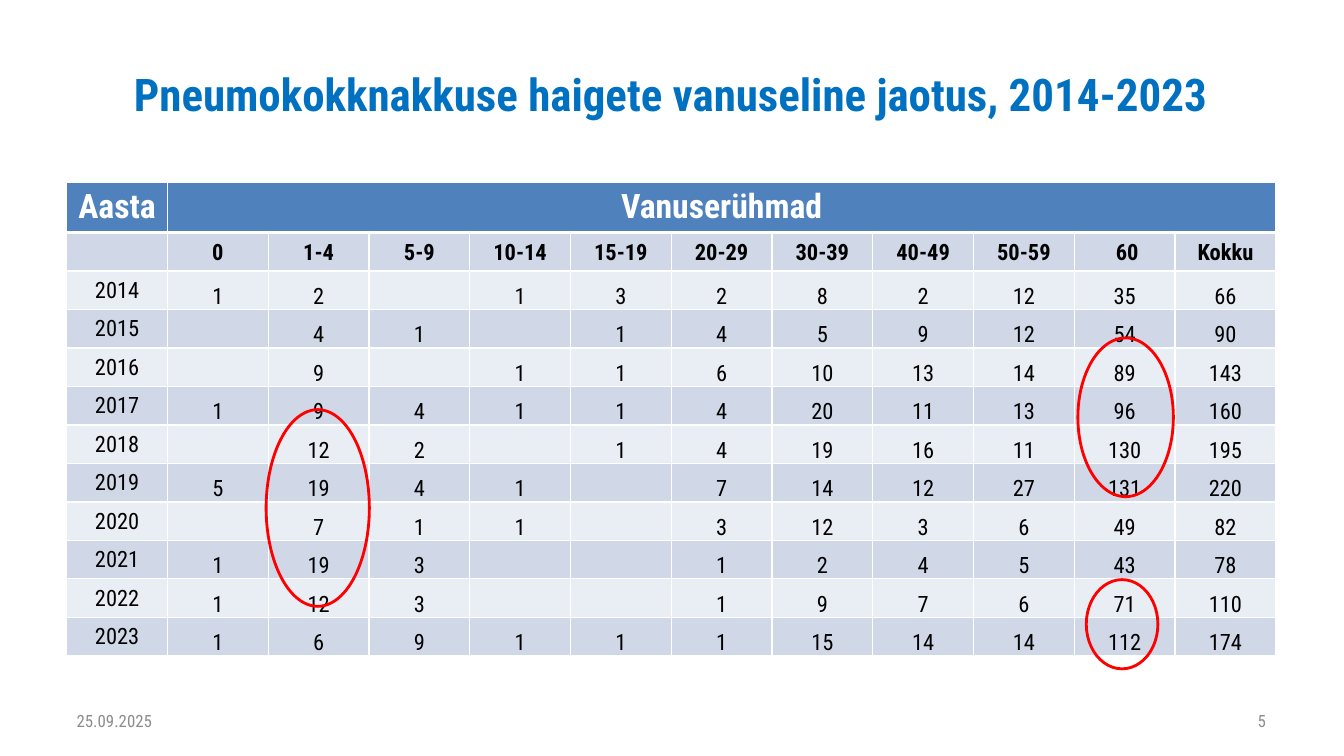
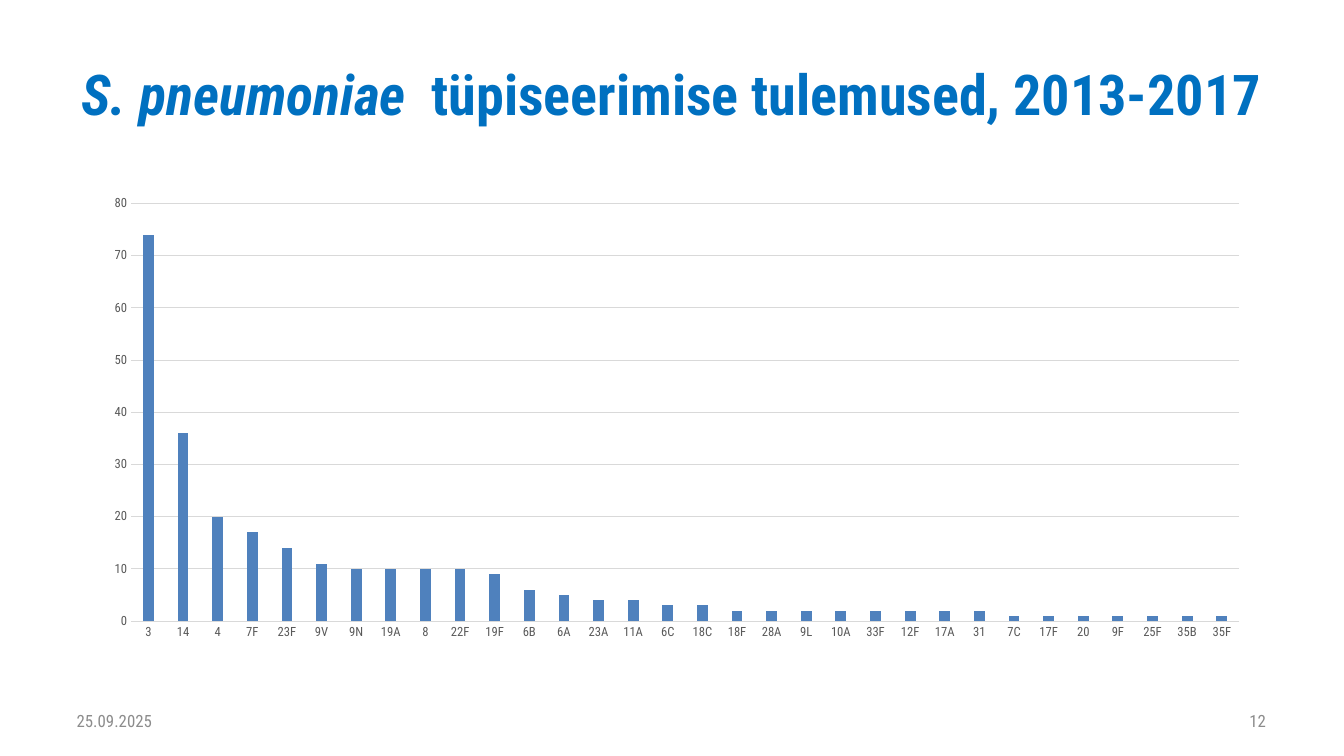
from dataclasses import dataclass

from lxml import etree
from pptx import Presentation
from pptx.chart.data import CategoryChartData
from pptx.dml.color import RGBColor
from pptx.enum.chart import XL_CHART_TYPE, XL_TICK_MARK
from pptx.enum.shapes import MSO_SHAPE
from pptx.enum.text import MSO_ANCHOR, PP_ALIGN
from pptx.oxml.ns import qn
from pptx.slide import Slide
from pptx.util import Pt

LEFT, MID, RIGHT = PP_ALIGN.LEFT, PP_ALIGN.CENTER, PP_ALIGN.RIGHT
TOP, CENTER, LOW = MSO_ANCHOR.TOP, MSO_ANCHOR.MIDDLE, MSO_ANCHOR.BOTTOM
OVAL = MSO_SHAPE.OVAL
COLUMN = XL_CHART_TYPE.COLUMN_CLUSTERED
NO_TICK = XL_TICK_MARK.NONE

FONT = "Roboto Condensed"
COLORS = {
    "title": "0070C0", "foot": "8C8C8C", "head": "4F81BD", "dark": "D0D8E8",
    "light": "E9EDF4", "white": "FFFFFF", "black": "000000", "ring": "FF0000",
    "label": "595959", "grid": "D9D9D9",
}
DATE = "25.09.2025"
EDGE, WIDE = 47.5, 861


@dataclass
class Box:
    x: float
    y: float
    w: float
    h: float

    def pts(self) -> tuple:
        return Pt(self.x), Pt(self.y), Pt(self.w), Pt(self.h)


@dataclass
class Run:
    text: str
    size: float
    color: str
    bold: bool = False
    italic: bool = False


TITLE = Box(EDGE, 21.5, WIDE, 90)
DAY = Box(EDGE, 499, 223, 28.5)
PAGE = Box(EDGE + WIDE - 223, 499, 223, 28.5)
TABLE = Box(EDGE, 129.5, WIDE, 328.8)
CHART = Box(65, 133, 834, 329)
RINGS = [
    Box(189.5, 291.5, 73.5, 140),
    Box(767.5, 240.5, 68, 113),
    Box(773.5, 412.5, 51, 63.5),
]

AGES = ["", "0", "1-4", "5-9", "10-14", "15-19", "20-29", "30-39", "40-49",
        "50-59", " 60", "Kokku"]
CASES = [
    [2014, 1, 2, "", 1, 3, 2, 8, 2, 12, 35, 66],
    [2015, "", 4, 1, "", 1, 4, 5, 9, 12, 54, 90],
    [2016, "", 9, "", 1, 1, 6, 10, 13, 14, 89, 143],
    [2017, 1, 9, 4, 1, 1, 4, 20, 11, 13, 96, 160],
    [2018, "", 12, 2, "", 1, 4, 19, 16, 11, 130, 195],
    [2019, 5, 19, 4, 1, "", 7, 14, 12, 27, 131, 220],
    [2020, "", 7, 1, 1, "", 3, 12, 3, 6, 49, 82],
    [2021, 1, 19, 3, "", "", 1, 2, 4, 5, 43, 78],
    [2022, 1, 12, 3, "", "", 1, 9, 7, 6, 71, 110],
    [2023, 1, 6, 9, 1, 1, 1, 15, 14, 14, 112, 174],
]
TYPES = {
    "3": 74, "14": 36, "4": 20, "7F": 17, "23F": 14, "9V": 11, "9N": 10,
    "19A": 10, "8": 10, "22F": 10, "19F": 9, "6B": 6, "6A": 5, "23A": 4,
    "11A": 4, "6C": 3, "18C": 3, "18F": 2, "28A": 2, "9L": 2, "10A": 2,
    "33F": 2, "12F": 2, "17A": 2, "31": 2, "7C": 1, "17F": 1, "20": 1,
    "9F": 1, "25F": 1, "35B": 1, "35F": 1,
}


def rgb(name: str) -> RGBColor:
    return RGBColor.from_string(COLORS[name])


def style(font, size: float, color: str) -> None:
    font.name, font.size = FONT, Pt(size)
    font.color.rgb = rgb(color)


def write(frame, runs: list[Run], align) -> None:
    para = frame.paragraphs[0]
    para.alignment = align
    for item in runs:
        run = para.add_run()
        run.text = item.text
        style(run.font, item.size, item.color)
        run.font.bold, run.font.italic = item.bold, item.italic


def label(slide: Slide, box: Box, runs: list[Run], align) -> None:
    frame = slide.shapes.add_textbox(*box.pts()).text_frame
    frame.word_wrap = True
    frame.vertical_anchor = CENTER
    write(frame, runs, align)


def new_page(deck, title: list[Run], page: int) -> Slide:
    """Add a blank slide with its title and footer."""
    slide = deck.slides.add_slide(deck.slide_layouts[6])
    label(slide, TITLE, title, MID)
    label(slide, DAY, [Run(DATE, 12, "foot")], LEFT)
    label(slide, PAGE, [Run(str(page), 12, "foot")], RIGHT)
    return slide


def border(cell, low: float) -> None:
    props = cell._tc.get_or_add_tcPr()
    for side, width in (("L", 1), ("R", 1), ("T", 1), ("B", low)):
        line = etree.SubElement(props, qn(f"a:ln{side}"), w=str(Pt(width)))
        fill = etree.SubElement(line, qn("a:solidFill"))
        etree.SubElement(fill, qn("a:srgbClr"), val=COLORS["white"])


def paint(cell, fill: str, low: float = 1) -> None:
    border(cell, low)
    cell.fill.solid()
    cell.fill.fore_color.rgb = rgb(fill)


def add_cases(slide: Slide) -> None:
    rows = [AGES, *CASES]
    grid = slide.shapes.add_table(len(rows) + 1, len(AGES), *TABLE.pts()).table
    # Header row
    for col in range(len(AGES)):
        paint(grid.cell(0, col), "head", 3)
    grid.cell(0, 1).merge(grid.cell(0, len(AGES) - 1))
    for col, text in enumerate(("Aasta", "Vanuserühmad")):
        write(grid.cell(0, col).text_frame, [Run(text, 24, "white", True)], MID)
    # Age groups and yearly counts
    for row, values in enumerate(rows, 1):
        for col, value in enumerate(values):
            cell = grid.cell(row, col)
            paint(cell, "dark" if row % 2 else "light")
            cell.margin_left = cell.margin_right = cell.margin_top = Pt(0.75)
            cell.margin_bottom = Pt(0)
            cell.vertical_anchor = CENTER if row == 1 or col == 0 else LOW
            if value != "":
                write(cell.text_frame, [Run(str(value), 16, "black", row == 1)], MID)


def add_ring(slide: Slide, box: Box) -> None:
    ring = slide.shapes.add_shape(OVAL, *box.pts())
    ring.shadow.inherit = False
    ring.fill.background()
    ring.line.color.rgb = rgb("ring")
    ring.line.width = Pt(2)


def add_types(slide: Slide) -> None:
    data = CategoryChartData()
    data.categories = list(TYPES)
    data.add_series("Series 1", list(TYPES.values()))
    chart = slide.shapes.add_chart(COLUMN, *CHART.pts(), data).chart
    chart.has_legend = chart.has_title = False
    style(chart.font, 10, "black")
    # Bars
    plot = chart.plots[0]
    plot.vary_by_categories = False
    plot.gap_width, plot.overlap = 219, -27
    bars = plot.series[0].format.fill
    bars.solid()
    bars.fore_color.rgb = rgb("head")
    # Axes
    cat, val = chart.category_axis, chart.value_axis
    for axis in (cat, val):
        axis.major_tick_mark = axis.minor_tick_mark = NO_TICK
        style(axis.tick_labels.font, 9, "label")
    val.minimum_scale, val.maximum_scale, val.major_unit = 0, 80, 10
    val.format.line.fill.background()
    for line in (cat.format.line, val.major_gridlines.format.line):
        line.color.rgb = rgb("grid")
        line.width = Pt(0.75)


def main() -> None:
    deck = Presentation()
    deck.slide_width, deck.slide_height = Pt(957), Pt(538)

    # Cases by age
    ages = new_page(deck, [
        Run("Pneumokokknakkuse haigete vanuseline jaotus, 2014-2023", 32, "title", True),
    ], 5)
    add_cases(ages)
    for box in RINGS:
        add_ring(ages, box)

    # Typing results
    types = new_page(deck, [
        Run("S. pneumoniae ", 40, "title", True, True),
        Run(" tüpiseerimise tulemused, 2013-2017", 40, "title", True),
    ], 12)
    add_types(types)

    deck.save("out.pptx")


if __name__ == "__main__":
    main()
